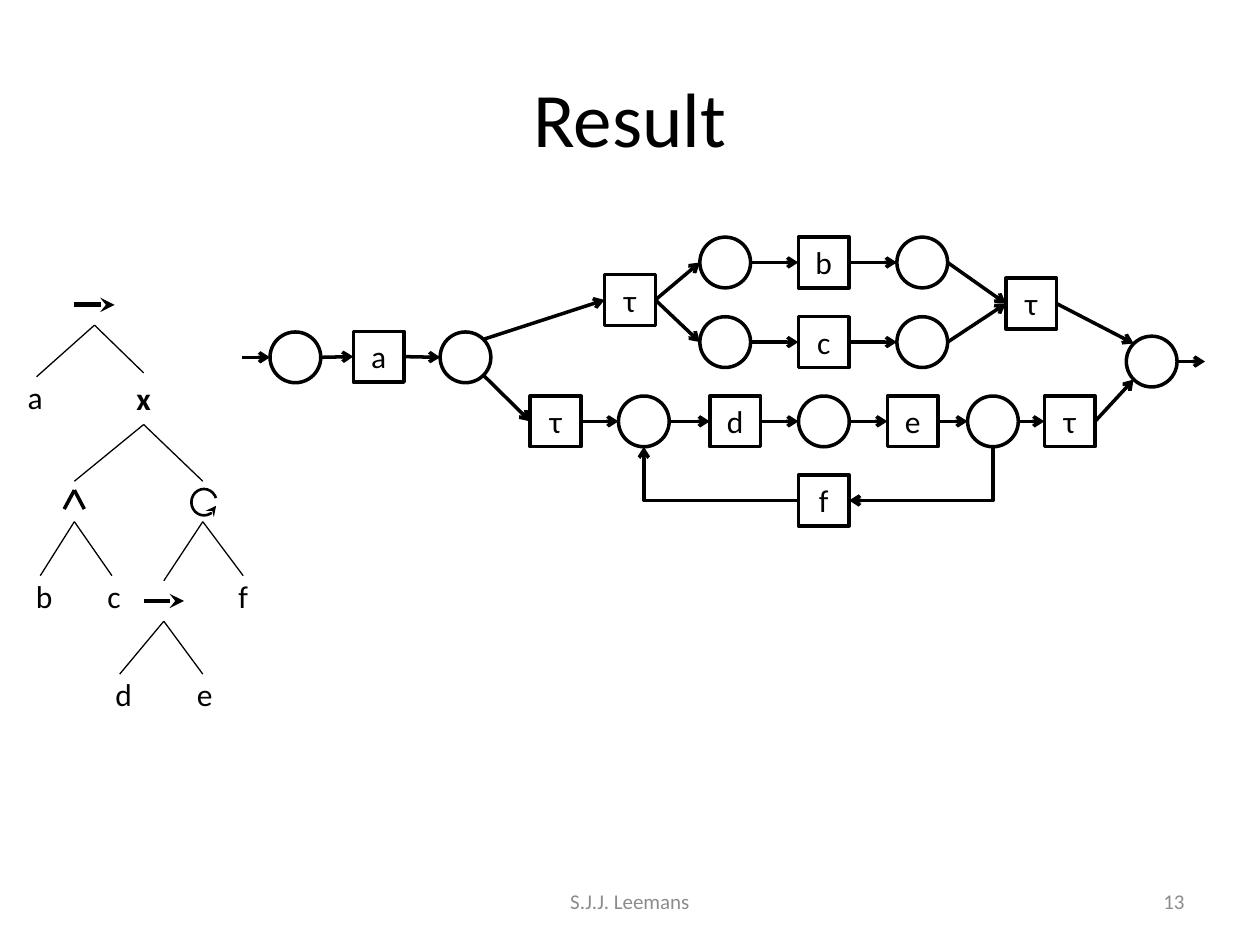
from lxml import etree
from pptx import Presentation
from pptx.dml.color import RGBColor
from pptx.enum import shapes, text
from pptx.oxml import ns
from pptx.util import Pt

BLACK = RGBColor(0x00, 0x00, 0x00)
WHITE = RGBColor(0xFF, 0xFF, 0xFF)
GREY = RGBColor(0x8C, 0x8C, 0x8C)
FONT = "Calibri"
NODE = 29  # side of a transition and diameter of a place

# Unit direction from a node's centre to the point where an arc meets it
SIDES = {"left": (-1, 0), "right": (1, 0), "top": (0, -1), "bottom": (0, 1),
         "upper left": (-0.71, -0.71), "upper right": (0.71, -0.71),
         "lower left": (-0.71, 0.71), "lower right": (0.71, 0.71)}
RECT_SITES = {"top": 0, "left": 1, "bottom": 2, "right": 3}

# name: (centre x, centre y)
PLACES = {
    "start": (30.8, 69.2), "choice": (128, 69.2), "end": (520.1, 71.6),
    "b in": (276.4, 15), "b out": (389, 15),
    "c in": (276.4, 60.5), "c out": (389, 60.5),
    "loop in": (229.9, 105.8), "loop mid": (332.8, 105.8), "loop out": (429.4, 105.8),
}
# name: (centre x, centre y, label)
TRANSITIONS = {
    "a": (78.4, 68.8, "a"), "b": (332.7, 15, "b"), "c": (332.7, 60.5, "c"),
    "d": (282.1, 105.8, "d"), "e": (383.6, 105.8, "e"), "f": (332.7, 151, "f"),
    "split": (222, 36.4, "τ"), "join": (451.3, 38.5, "τ"),
    "enter": (179.5, 105.8, "τ"), "leave": (473.3, 105.8, "τ"),
}
# Each chain is followed from right side to left side
CHAINS = [
    ["start", "a", "choice"],
    ["split", "b in", "b", "b out", "join"],
    ["split", "c in", "c", "c out", "join"],
    ["enter", "loop in", "d", "loop mid", "e", "loop out", "leave"],
]
SLANTED = [("choice", "upper right", "split", "left"),
           ("choice", "lower right", "enter", "left"),
           ("join", "right", "end", "upper left"),
           ("leave", "right", "end", "lower left")]

# (apex, left foot, right foot)
TREE_FORKS = [
    ((46, 11.8), (12.9, 41.3), (74.1, 39.1)),
    ((74.1, 68.6), (34.5, 101), (107.9, 101)),
    ((34.5, 124.1), (15, 155), (56, 155)),
    ((107.9, 124.1), (85.6, 157.9), (131, 155)),
    ((85.6, 181), (60.4, 211.2), (107.9, 211.2)),
]
WEDGE = ((34.5, 106.1), (28.7, 116.9), (40.2, 116.9))
# (label, centre x, top, bold)
TREE_LABELS = [("a", 12.1, 38.4, False), ("x", 74.1, 39.1, True),
               ("b", 17.2, 152.2, False), ("c", 57.2, 152.2, False),
               ("f", 131, 152.2, False), ("d", 62.6, 208.3, False),
               ("e", 109, 208.3, False)]
SEQUENCE_ARROWS = [(34.5, 0.2), (74.1, 169.4)]


def add_run(tf, words, size, color=BLACK, align=text.PP_ALIGN.CENTER, bold=False):
    p = tf.paragraphs[0]
    p.alignment = align
    r = p.add_run()
    r.text = words
    r.font.name, r.font.size, r.font.bold = FONT, Pt(size), bold
    r.font.color.rgb = color


def add_text(s, box, words, size, **style):
    tf = s.shapes.add_textbox(*map(Pt, box)).text_frame
    tf.word_wrap = True
    tf.vertical_anchor = text.MSO_ANCHOR.MIDDLE
    add_run(tf, words, size, **style)


def add_line_end(sp, tag, kind):
    etree.SubElement(sp.line._get_or_add_ln(), ns.qn("a:" + tag), type=kind)


def add_line(s, start, end, width, arrow=None, kind=shapes.MSO_CONNECTOR.STRAIGHT):
    sp = s.shapes.add_connector(kind, *map(Pt, (*start, *end)))
    sp.line.color.rgb = BLACK
    sp.line.width = Pt(width)
    if arrow:
        add_line_end(sp, "tailEnd", arrow)
    etree.SubElement(sp._element.spPr, ns.qn("a:effectLst"))
    return sp


def add_corner(s, start, end, turn):
    """Draw an arrow with one right-angled bend, leaving in the direction turn (degrees)."""
    (x1, y1), (x2, y2) = start, end
    w, h = abs(x2 - x1), abs(y2 - y1)
    if turn % 180:
        w, h = h, w
    left, top = (x1 + x2 - w) / 2, (y1 + y2 - h) / 2
    sp = add_line(s, (left, top), (left + w, top + h), 2, "arrow", shapes.MSO_CONNECTOR.ELBOW)
    sp._element.spPr.find(ns.qn("a:xfrm")).set("rot", str(turn * 60000))
    sp._element.spPr.find(ns.qn("a:prstGeom")).set("prst", "bentConnector2")


def add_node(s, kind, cx, cy, label=None):
    box = (cx - NODE / 2, cy - NODE / 2, NODE, NODE)
    sp = s.shapes.add_shape(kind, *map(Pt, box))
    sp.shadow.inherit = False
    sp.fill.solid()
    sp.fill.fore_color.rgb = WHITE
    sp.line.color.rgb = BLACK
    sp.line.width = Pt(2)
    if label:
        tf = sp.text_frame
        tf.vertical_anchor = text.MSO_ANCHOR.TOP
        tf.auto_size = text.MSO_AUTO_SIZE.SHAPE_TO_FIT_TEXT
        add_run(tf, label, 18)
    return sp


def add_petri_net(s, left, top):
    centres, rects = {}, {}
    for name, (x, y) in PLACES.items():
        centres[name] = left + x, top + y
        add_node(s, shapes.MSO_SHAPE.OVAL, *centres[name])
    for name, (x, y, label) in TRANSITIONS.items():
        centres[name] = left + x, top + y
        rects[name] = add_node(s, shapes.MSO_SHAPE.RECTANGLE, *centres[name], label)

    def edge(name, side):
        return tuple(c + d * NODE / 2 for c, d in zip(centres[name], SIDES[side]))

    arcs = [(a, "right", b, "left") for chain in CHAINS for a, b in zip(chain, chain[1:])]
    for source, out, target, into in arcs + SLANTED:
        sp = add_line(s, edge(source, out), edge(target, into), 2, "arrow")
        if source in rects:
            sp.begin_connect(rects[source], RECT_SITES[out])
        if target in rects:
            sp.end_connect(rects[target], RECT_SITES[into])

    x, y = edge("start", "left")
    add_line(s, (x - 16, y), (x, y), 2, "arrow")
    x, y = edge("end", "right")
    add_line(s, (x, y), (x + 16, y), 2, "arrow")
    add_corner(s, edge("loop out", "bottom"), edge("f", "right"), 90)
    add_corner(s, edge("f", "left"), edge("loop in", "bottom"), 180)


def add_process_tree(s, left, top):
    def at(point):
        return left + point[0], top + point[1]

    for (apex, *feet), width in [(f, 0.75) for f in TREE_FORKS] + [(WEDGE, 2)]:
        for foot in feet:
            add_line(s, at(apex), at(foot), width)
    for x, y in SEQUENCE_ARROWS:
        add_line(s, at((x, y)), at((x + 23, y)), 2.75, "stealth")

    loop = s.shapes.add_shape(shapes.MSO_SHAPE.ARC, *map(Pt, (*at((101.4, 105.4)), 14.4, 15.1)))
    loop.shadow.inherit = False
    loop.adjustments[0], loop.adjustments[1] = 9.94, 204.61
    loop.fill.background()
    loop.line.color.rgb = BLACK
    loop.line.width = Pt(1.5)
    add_line_end(loop, "headEnd", "stealth")

    for label, x, y, bold in TREE_LABELS:
        tf = s.shapes.add_textbox(*map(Pt, (*at((x - 12, y)), 24, NODE))).text_frame
        tf.word_wrap = False
        tf.auto_size = text.MSO_AUTO_SIZE.SHAPE_TO_FIT_TEXT
        add_run(tf, label, 18, bold=bold)


def main():
    prs = Presentation()
    prs.slide_width, prs.slide_height = Pt(720), Pt(540)
    s = prs.slides.add_slide(prs.slide_layouts[6])
    add_text(s, (36, 21.6, 648, 90), "Result", 44)
    add_text(s, (246, 500.5, 228, 28.8), "S.J.J. Leemans", 12, color=GREY)
    add_text(s, (516, 500.5, 168, 28.8), "13", 12, color=GREY, align=text.PP_ALIGN.RIGHT)
    add_process_tree(s, 8, 174)
    add_petri_net(s, 138, 135)
    prs.save("out.pptx")


if __name__ == "__main__":
    main()
